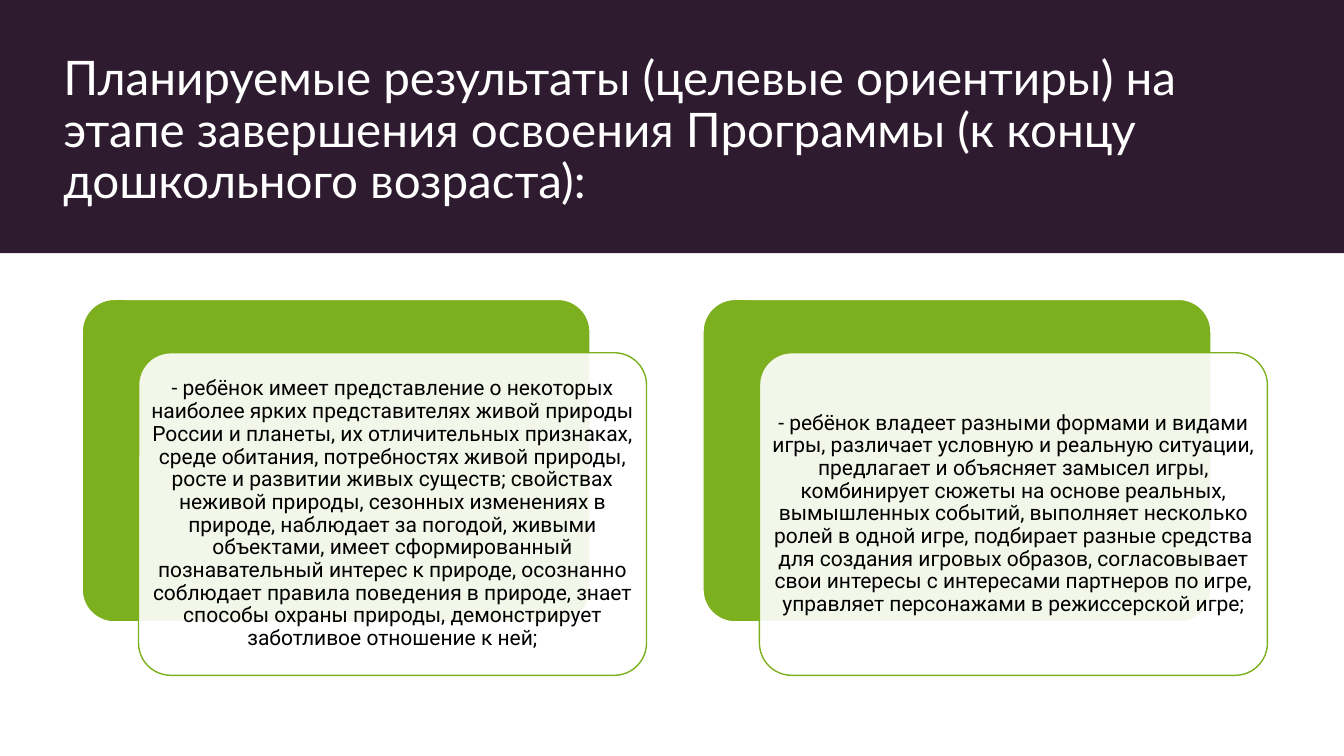
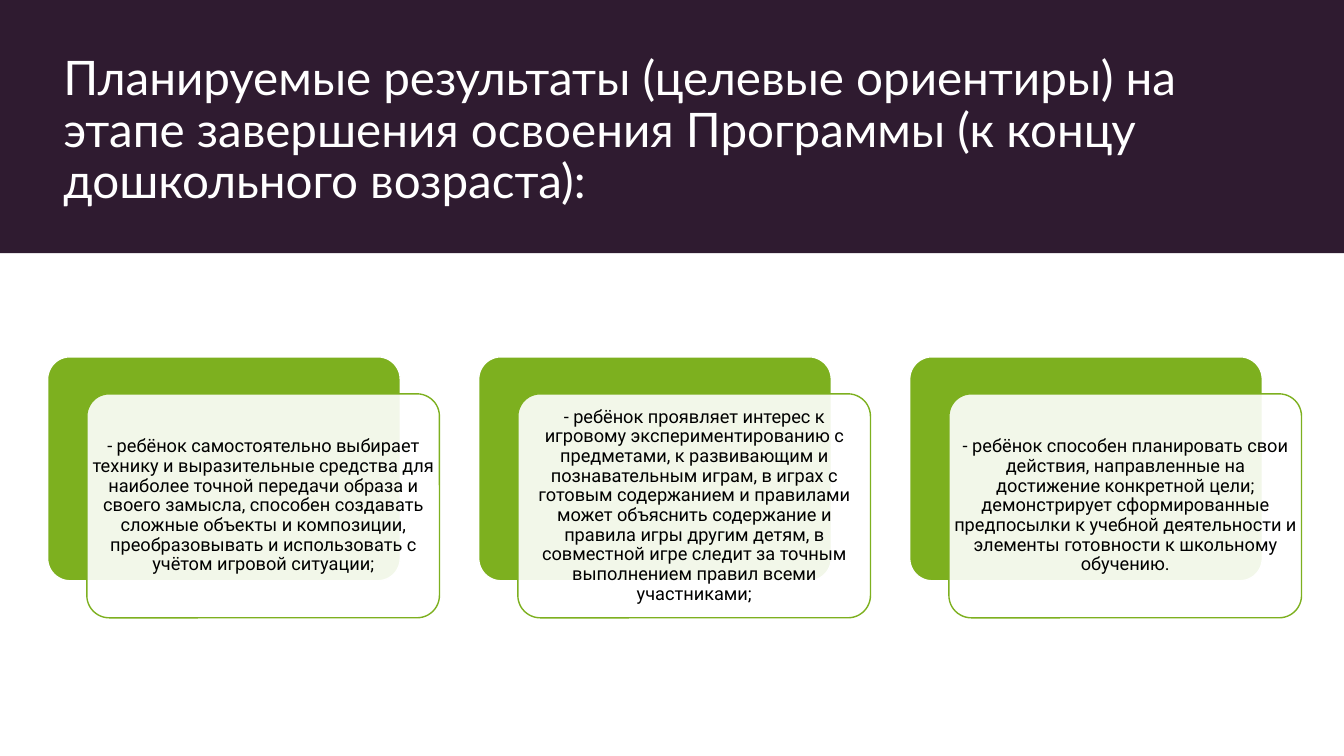
from lxml import etree
from pptx import Presentation
from pptx.dml.color import RGBColor
from pptx.enum.shapes import MSO_SHAPE as Preset
from pptx.enum.text import MSO_ANCHOR as Anchor, PP_ALIGN as Align
from pptx.oxml.ns import qn
from pptx.util import Cm, Pt

PLUM = RGBColor(0x2F, 0x1B, 0x30)
GREEN = RGBColor(0x7D, 0xB0, 0x1F)
WHITE = RGBColor(0xFF, 0xFF, 0xFF)
BLACK = RGBColor(0, 0, 0)

SLIDE_WIDTH, SLIDE_HEIGHT = 33.87, 19.05
BAND_HEIGHT = 6.38
CARDS_MIDDLE = 12.28

# Card proportions, relative to the width of one card
CARD_HEIGHT = 0.635
SHIFT_X = 1 / 9
SHIFT_Y = 0.105
GAP = 1 / 9

TITLE = ("Планируемые результаты (целевые ориентиры) на этапе завершения "
         "освоения Программы (к концу дошкольного возраста):")

NATURE_AND_PLAY = [
    "- ребёнок имеет представление о некоторых наиболее ярких представителях "
    "живой природы России и планеты, их отличительных признаках, среде обитания, "
    "потребностях живой природы, росте и развитии живых существ; свойствах "
    "неживой природы, сезонных изменениях в природе, наблюдает за погодой, живыми "
    "объектами, имеет сформированный познавательный интерес к природе, осознанно "
    "соблюдает правила поведения в природе, знает способы охраны природы, "
    "демонстрирует заботливое отношение к ней;",
    "- ребёнок владеет разными формами и видами игры, различает условную и "
    "реальную ситуации, предлагает и объясняет замысел игры, комбинирует сюжеты "
    "на основе реальных, вымышленных событий, выполняет несколько ролей в одной "
    "игре, подбирает разные средства для создания игровых образов, согласовывает "
    "свои интересы с интересами партнеров по игре, управляет персонажами в "
    "режиссерской игре;",
]

CREATIVITY_AND_PLANNING = [
    "- ребёнок самостоятельно выбирает технику и выразительные средства для "
    "наиболее точной передачи образа и своего замысла, способен создавать сложные "
    "объекты и композиции, преобразовывать и использовать с учётом игровой "
    "ситуации;",
    "- ребёнок проявляет интерес к игровому экспериментированию с предметами, к "
    "развивающим и познавательным играм, в играх с готовым содержанием и "
    "правилами может объяснить содержание и правила игры другим детям, в "
    "совместной игре следит за точным выполнением правил всеми участниками;",
    "- ребёнок способен планировать свои действия, направленные на достижение "
    "конкретной цели; демонстрирует сформированные предпосылки к учебной "
    "деятельности и элементы готовности к школьному обучению.",
]


def add_panel(slide, preset, box, fill, line=None, opacity=None):
    panel = slide.shapes.add_shape(preset, *map(Cm, box))
    panel.shadow.inherit = False
    panel.fill.solid()
    panel.fill.fore_color.rgb = fill
    if line is None:
        panel.line.fill.background()
    else:
        panel.line.color.rgb = line
        panel.line.width = Pt(1)
    if preset == Preset.ROUNDED_RECTANGLE:
        panel.adjustments[0] = 0.1
    if opacity is not None:
        color = panel.fill._xPr.find(qn("a:solidFill"))[0]
        etree.SubElement(color, qn("a:alpha"), val=str(opacity * 1000))


def add_text(slide, box, text, font, size, color, anchor, align, inset_x, inset_y):
    frame = slide.shapes.add_textbox(*map(Cm, box)).text_frame
    frame.word_wrap = True
    frame.vertical_anchor = anchor
    frame.margin_left = frame.margin_right = Cm(inset_x)
    frame.margin_top = frame.margin_bottom = Cm(inset_y)
    frame.text = text
    paragraph = frame.paragraphs[0]
    paragraph.alignment = align
    paragraph.line_spacing = 0.9
    run_font = paragraph.runs[0].font
    run_font.name = font
    run_font.size = Pt(size)
    run_font.color.rgb = color


def add_header(slide, box):
    left, top, width, height = box
    add_panel(slide, Preset.RECTANGLE, box, PLUM)
    title_box = (left + 1.35, top + 1.02, width - 3.67, height - 2.01)
    add_text(slide, title_box, TITLE, "Lato", 34, WHITE, Anchor.BOTTOM, Align.LEFT,
             0.25, 0.13)


def add_card(slide, left, top, width, text, size):
    """Green plate with a translucent text plate shifted down and right."""
    height = width * CARD_HEIGHT
    front = (left + width * SHIFT_X, top + width * SHIFT_Y, width, height)
    add_panel(slide, Preset.ROUNDED_RECTANGLE, (left, top, width, height), GREEN, WHITE)
    add_panel(slide, Preset.ROUNDED_RECTANGLE, front, WHITE, GREEN, opacity=90)
    inset = size / 100
    add_text(slide, front, text, "Roboto", size, BLACK, Anchor.MIDDLE, Align.CENTER,
             inset, inset)


def add_card_row(slide, left, middle, width, texts, size):
    """Fill the width with equal cards, centred vertically on middle."""
    count = len(texts)
    card_width = width / (count * (1 + SHIFT_X) + (count - 1) * GAP)
    pitch = card_width * (1 + SHIFT_X + GAP)
    top = middle - card_width * (CARD_HEIGHT + SHIFT_Y) / 2
    for index, text in enumerate(texts):
        add_card(slide, left + index * pitch, top, card_width, text, size)


def add_results_slide(deck, left, width, texts, size):
    slide = deck.slides.add_slide(deck.slide_layouts[6])
    add_header(slide, (0, 0, SLIDE_WIDTH, BAND_HEIGHT))
    add_card_row(slide, left, CARDS_MIDDLE, width, texts, size)


def main():
    deck = Presentation()
    deck.slide_width, deck.slide_height = Cm(SLIDE_WIDTH), Cm(SLIDE_HEIGHT)
    add_results_slide(deck, 2.07, 29.87, NATURE_AND_PLAY, 15)
    add_results_slide(deck, 1.2, 31.6, CREATIVITY_AND_PLANNING, 13)
    deck.save("out.pptx")


if __name__ == "__main__":
    main()
